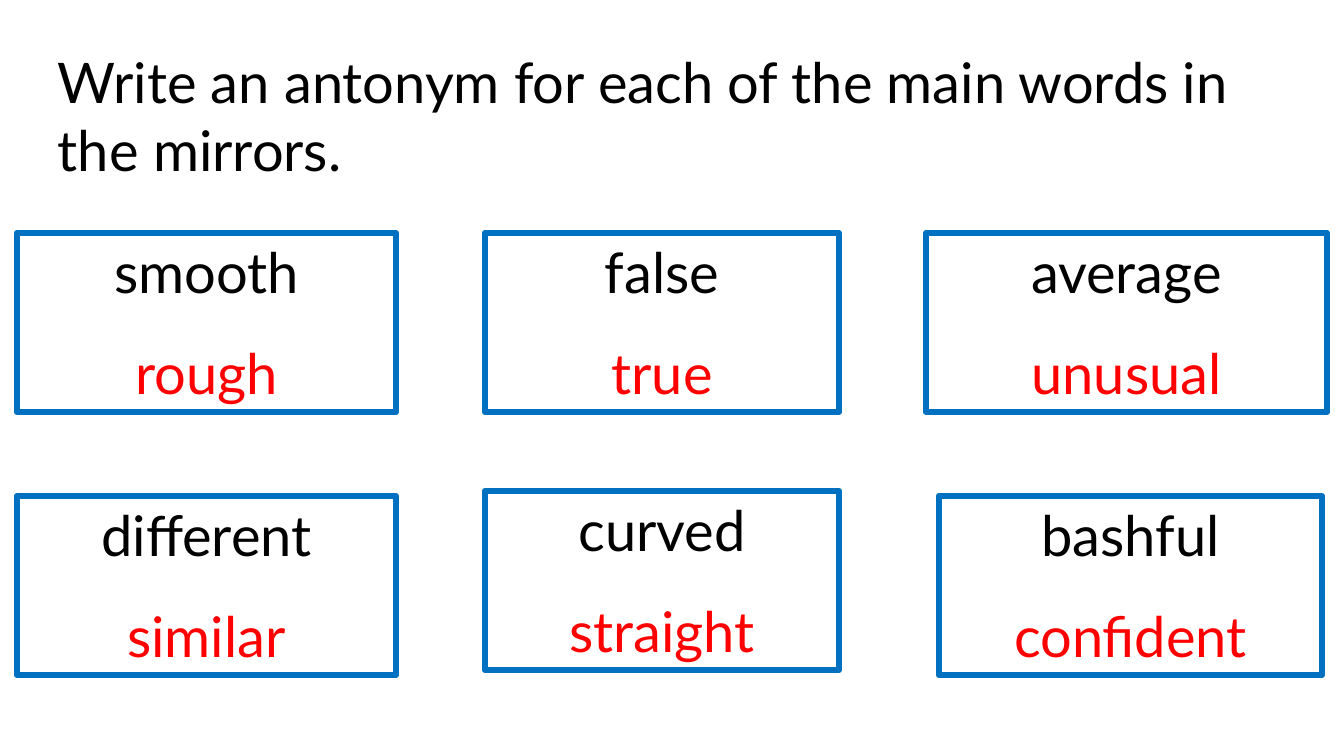
from dataclasses import dataclass

from pptx import Presentation
from pptx.dml.color import RGBColor as Color
from pptx.enum.shapes import MSO_SHAPE as Shape
from pptx.enum.text import MSO_ANCHOR as Anchor, MSO_AUTO_SIZE as AutoSize, PP_ALIGN as Align
from pptx.util import Emu, Pt

PX_PER_INCH = 100.8


@dataclass(frozen=True)
class Theme:
    font: str = "Lato"
    size: Pt = Pt(40)
    answer_gap: Pt = Pt(24)
    frame_width: Pt = Pt(4.5)
    text: Color = Color(0, 0, 0)
    answer: Color = Color(255, 0, 0)
    frame: Color = Color(0x00, 0x70, 0xC0)


THEME = Theme()
INSTRUCTION = "Write an antonym for each of the main words in the mirrors."
MIRROR_HEIGHT = 179

# word, antonym, left, top, width
MIRRORS = [
    ("smooth", "rough", 17, 233, 379),
    ("false", "true", 485, 233, 354),
    ("average", "unusual", 926, 233, 401),
    ("different", "similar", 17, 496, 379),
    ("curved", "straight", 485, 491, 354),
    ("bashful", "confident", 939, 496, 383),
]


def px(length):
    return Emu(round(length * 914400 / PX_PER_INCH))


def write(para, text, color, align):
    para.text = text
    para.alignment = align
    para.font.name = THEME.font
    para.font.size = THEME.size
    para.font.color.rgb = color


def prepare_frame(frame):
    """Wrap the text from the top and let its box grow with it."""
    frame.word_wrap = True
    frame.auto_size = AutoSize.SHAPE_TO_FIT_TEXT
    frame.vertical_anchor = Anchor.TOP


def add_instruction(page, text, left, top, width, height):
    box = page.shapes.add_textbox(px(left), px(top), px(width), px(height))
    prepare_frame(box.text_frame)
    write(box.text_frame.paragraphs[0], text, THEME.text, Align.LEFT)


def add_mirror(page, word, antonym, left, top, width):
    """Draw a framed box with a word above its antonym."""
    box = page.shapes.add_shape(
        Shape.RECTANGLE, px(left), px(top), px(width), px(MIRROR_HEIGHT))
    box.shadow.inherit = False
    box.fill.background()
    box.line.color.rgb = THEME.frame
    box.line.width = THEME.frame_width
    prepare_frame(box.text_frame)
    write(box.text_frame.paragraphs[0], word, THEME.text, Align.CENTER)
    answer = box.text_frame.add_paragraph()
    write(answer, antonym, THEME.answer, Align.CENTER)
    answer.space_before = THEME.answer_gap


def main():
    deck = Presentation()
    deck.slide_width, deck.slide_height = px(1344), px(756)
    page = deck.slides.add_slide(deck.slide_layouts[6])
    add_instruction(page, INSTRUCTION, 48, 43, 1243, 146)
    for mirror in MIRRORS:
        add_mirror(page, *mirror)
    deck.save("out.pptx")


if __name__ == "__main__":
    main()
